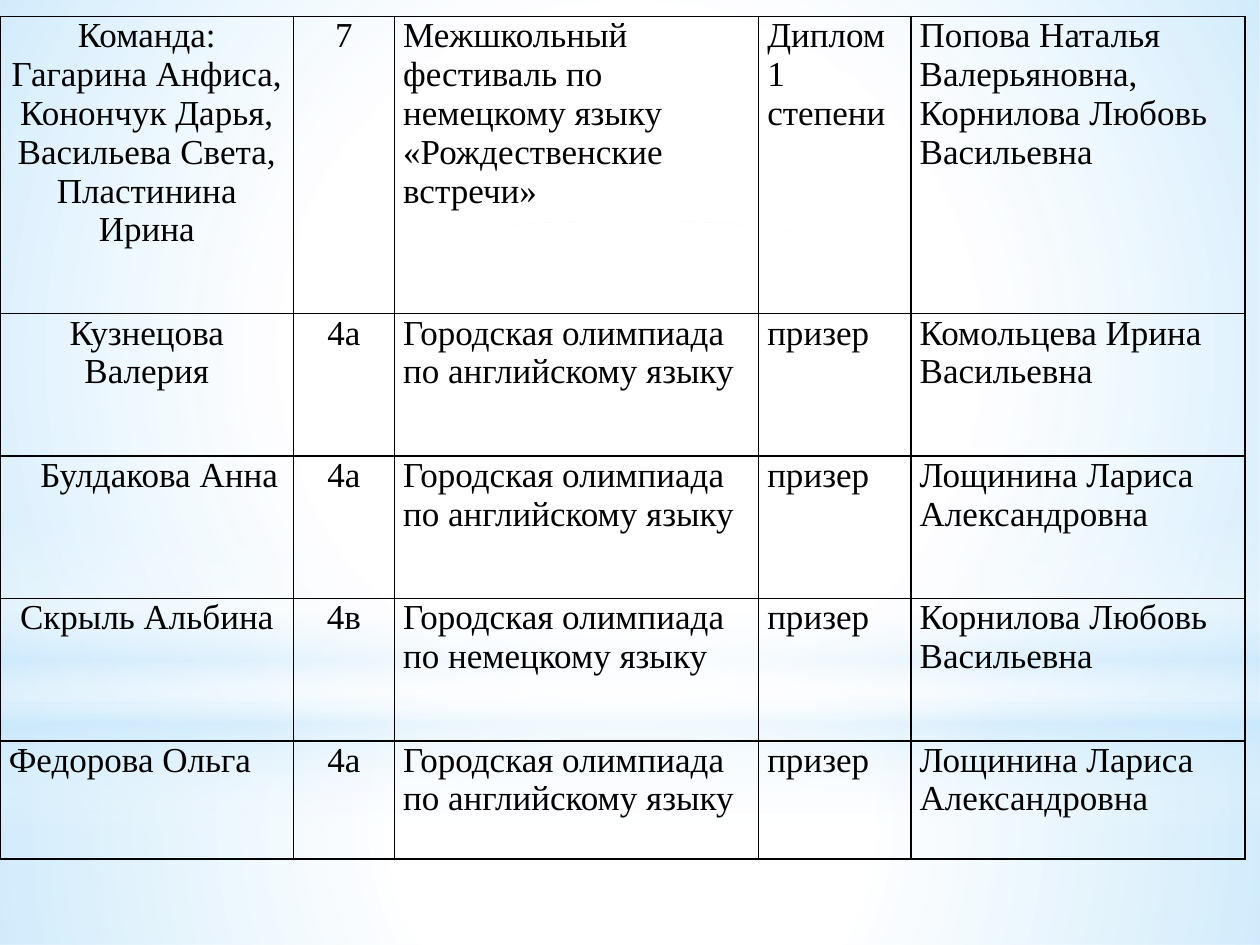
from dataclasses import dataclass
from typing import Optional

from lxml.etree import SubElement
from pptx import Presentation
from pptx.dml.color import RGBColor
from pptx.enum.shapes import MSO_SHAPE as Shape
from pptx.enum.text import PP_ALIGN as Align
from pptx.oxml import parse_xml
from pptx.oxml.ns import nsdecls, qn
from pptx.util import Inches, Pt

WHITE = RGBColor(0xFF, 0xFF, 0xFF)
SKY = RGBColor(0xC6, 0xE7, 0xFC)
BLACK = RGBColor(0, 0, 0)
FONT = "Times New Roman"
COLS = (2.33, 0.8, 2.89, 1.21, 2.65)
EDGES = ("lnL", "lnR", "lnT", "lnB")


@dataclass
class Glow:
    form: Shape
    top: float
    high: float
    stops: tuple
    angle: Optional[int] = None


@dataclass
class Entry:
    name: str
    grade: str
    event: str
    prize: str
    tutor: str
    high: float = 1.13
    align: Align = Align.CENTER


GLOWS = (
    Glow(Shape.RECTANGLE, 5.58, 1.92, ((0, WHITE, 91), (37, WHITE, 76), (100, SKY, 79))),
    Glow(Shape.RECTANGLE, 0, 5.58, ((0, WHITE, 89), (48, WHITE, 62), (100, SKY, 79))),
    Glow(Shape.RECTANGLE, 4.12, 2.5, ((0, WHITE, 0), (29, WHITE, 30), (45, SKY, 40),
                                      (55, WHITE, 26), (65, SKY, 60), (100, WHITE, 0)), 90),
    Glow(Shape.OVAL, 1.75, 5.58, ((0, WHITE, 100), (56, WHITE, 0))),
)

ENGLISH = "Городская олимпиада по английскому языку"
GERMAN = "Городская олимпиада по немецкому языку"
LARISA = "Лощинина Лариса Александровна"
LYUBOV = "Корнилова Любовь Васильевна"

ENTRIES = (
    Entry("Команда:\nГагарина Анфиса,\nКонончук Дарья,\nВасильева Света,\nПластинина Ирина", "7",
          "Межшкольный фестиваль по немецкому языку «Рождественские встречи»",
          "Диплом 1 степени", "Попова Наталья Валерьяновна,\n" + LYUBOV, 2.36),
    Entry("Кузнецова Валерия", "4а", ENGLISH, "призер", "Комольцева Ирина Васильевна"),
    Entry("\tБулдакова Анна", "4а", ENGLISH, "призер", LARISA, align=Align.LEFT),
    Entry("Скрыль Альбина", "4в", GERMAN, "призер", LYUBOV),
    Entry("Федорова Ольга", "4а", ENGLISH, "призер", LARISA, 0.94, Align.LEFT),
)


def add_glow(slide, glow: Glow) -> None:
    shape = slide.shapes.add_shape(
        glow.form, 0, Inches(glow.top), Inches(10), Inches(glow.high))
    shape.shadow.inherit = False
    shape.line.fill.background()
    shape.fill.background()
    stops = "".join(
        f'<a:gs pos="{pos * 1000}"><a:srgbClr val="{color}">'
        f'<a:alpha val="{alpha * 1000}"/></a:srgbClr></a:gs>'
        for pos, color, alpha in glow.stops)
    if glow.angle is None:
        kind = ('<a:path path="circle"><a:fillToRect l="50000" t="50000" '
                'r="50000" b="50000"/></a:path>')
    else:
        kind = f'<a:lin ang="{glow.angle * 60000}" scaled="0"/>'
    grad = parse_xml(f'<a:gradFill {nsdecls("a")} rotWithShape="1">'
                     f'<a:gsLst>{stops}</a:gsLst>{kind}</a:gradFill>')
    props = shape._element.spPr
    props.replace(props.find(qn("a:noFill")), grad)


def add_edges(cell) -> None:
    props = cell._tc.get_or_add_tcPr()
    for spot, edge in enumerate(EDGES):
        props.insert(spot, parse_xml(
            f'<a:{edge} {nsdecls("a")} w="{Pt(1)}"><a:solidFill>'
            f'<a:srgbClr val="{BLACK}"/></a:solidFill></a:{edge}>'))


def fill_cell(cell, text: str, align: Align) -> None:
    cell.margin_left = cell.margin_right = Inches(0.07)
    cell.margin_top = cell.margin_bottom = 0
    cell.fill.background()
    add_edges(cell)
    cell.text_frame.text = text
    for para in cell.text_frame.paragraphs:
        para.alignment = align
        if text.startswith("\t"):
            tabs = SubElement(para._p.get_or_add_pPr(), qn("a:tabLst"))
            SubElement(tabs, qn("a:tab"), pos=str(Inches(0.25)), algn="l")
        para.font.name = FONT
        para.font.size = Pt(20)
        para.font.color.rgb = BLACK


def add_list(slide) -> None:
    high = sum(entry.high for entry in ENTRIES)
    table = slide.shapes.add_table(
        len(ENTRIES), len(COLS), 0, Inches(0.13), Inches(sum(COLS)), Inches(high)).table
    table.first_row = table.horz_banding = False
    for col, width in zip(table.columns, COLS):
        col.width = Inches(width)
    for row, entry in zip(table.rows, ENTRIES):
        row.height = Inches(entry.high)
        texts = (entry.name, entry.grade, entry.event, entry.prize, entry.tutor)
        aligns = (entry.align, Align.CENTER, Align.LEFT, Align.LEFT, Align.LEFT)
        for cell, text, align in zip(row.cells, texts, aligns):
            fill_cell(cell, text, align)


def main() -> None:
    deck = Presentation()
    deck.slide_width, deck.slide_height = Inches(10), Inches(7.5)
    slide = deck.slides.add_slide(deck.slide_layouts[6])
    slide.background.fill.solid()
    slide.background.fill.fore_color.rgb = WHITE
    for glow in GLOWS:
        add_glow(slide, glow)
    add_list(slide)
    deck.save("out.pptx")


if __name__ == "__main__":
    main()
